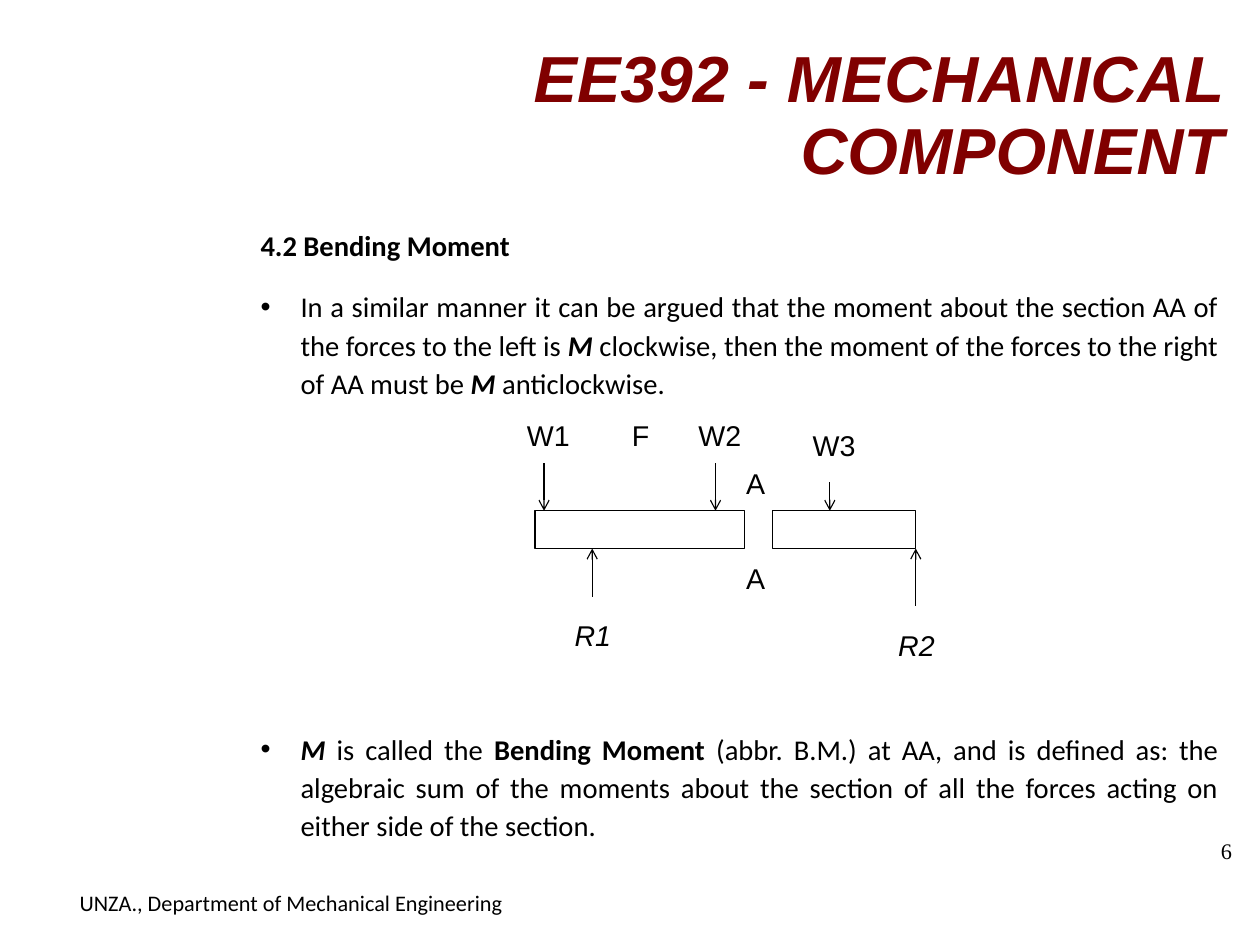
from lxml import etree
from pptx import Presentation
from pptx.dml.color import RGBColor
from pptx.enum.shapes import MSO_CONNECTOR, MSO_SHAPE
from pptx.enum.text import MSO_ANCHOR, MSO_AUTO_SIZE, PP_ALIGN
from pptx.oxml.ns import qn
from pptx.util import Cm, Pt

LEFT, RIGHT, JUSTIFY = PP_ALIGN.LEFT, PP_ALIGN.RIGHT, PP_ALIGN.JUSTIFY
TOP, MIDDLE = MSO_ANCHOR.TOP, MSO_ANCHOR.MIDDLE
NO_AUTOFIT = MSO_AUTO_SIZE.NONE
RECTANGLE = MSO_SHAPE.RECTANGLE
STRAIGHT = MSO_CONNECTOR.STRAIGHT

COLOURS = {"title": "800000", "ink": "000000", "paper": "FFFFFF"}

# Content: a run is (text, style), where style holds "b" and/or "i".
TITLE = "EE392 - MECHANICAL COMPONENT"
FOOTER = "UNZA., Department of Mechanical Engineering"
PAGE_NUMBER = "6"
HEADING = [("4.2 Bending Moment", "b")]
ARGUMENT = [
    ("In a similar manner it can be argued that the moment about the section AA "
     "of the forces to the left is ", ""),
    ("M ", "bi"),
    ("clockwise, then the moment of the forces to the right of AA must be ", ""),
    ("M", "bi"),
    (" anticlockwise.", ""),
]
DEFINITION = [
    ("M", "bi"),
    (" is called the ", ""),
    ("Bending Moment ", "b"),
    ("(abbr. B.M.) at AA, and is defined as: the algebraic sum of the moments about "
     "the section of all the forces acting on either side of the section.", ""),
]
DIAGRAM_GAP = 192  # points kept free for the diagram

# Diagram, in centimetres
BEAM_TOP, BEAM_HEIGHT = 11.35, 0.84
BEAM_BOTTOM = BEAM_TOP + BEAM_HEIGHT
BEAMS = [(11.89, 4.65), (17.17, 3.18)]  # left, width
LOADS = [(12.09, 10.29), (15.9, 10.29), (18.44, 10.72)]  # x, start of arrow
REACTIONS = [(13.16, 13.26), (20.35, 13.46)]
LABEL_HEIGHT = 0.97
LABELS = [  # text, style, left, top, width
    ("W1", "", 11.46, 9.22, 1.7),
    ("F", "", 13.79, 9.22, 1.07),
    ("W2", "", 15.27, 9.22, 1.47),
    ("W3", "", 17.81, 9.45, 1.7),
    ("A", "", 16.33, 10.29, 1.07),
    ("A", "", 16.33, 12.4, 1.7),
    ("R1", "i", 12.52, 13.67, 1.7),
    ("R2", "i", 19.71, 13.89, 1.7),
]


def colour(name):
    return RGBColor.from_string(COLOURS[name])


def set_frame(frame, insets=(0, 0, 0, 0), anchor=TOP):
    frame.word_wrap = True
    frame.auto_size = NO_AUTOFIT
    frame.vertical_anchor = anchor
    (frame.margin_left, frame.margin_top,
     frame.margin_right, frame.margin_bottom) = map(Cm, insets)


def write(paragraph, runs, *, size=18, font="Arial", ink="ink", align=LEFT,
          spacing=0.93, before=0, after=0):
    paragraph.alignment = align
    paragraph.line_spacing = spacing
    paragraph.space_before, paragraph.space_after = Pt(before), Pt(after)
    for text, style in runs:
        run = paragraph.add_run()
        run.text = text
        run.font.name, run.font.size = font, Pt(size)
        run.font.bold, run.font.italic = "b" in style, "i" in style
        run.font.color.rgb = colour(ink)


def hang(paragraph, bullet):
    """Give a hanging indent and, if asked, a round bullet."""
    properties = paragraph._p.get_or_add_pPr()
    properties.set("marL", str(Cm(1.19)))
    properties.set("indent", str(-Cm(0.89)))
    if bullet:
        etree.SubElement(properties, qn("a:buFont")).set("typeface", "Arial")
        etree.SubElement(properties, qn("a:buChar")).set("char", "•")


def add_text(slide, left, top, width, height, insets=(0, 0, 0, 0)):
    box = slide.shapes.add_textbox(Cm(left), Cm(top), Cm(width), Cm(height))
    set_frame(box.text_frame, insets)
    return box


def add_beam(slide, left, width):
    beam = slide.shapes.add_shape(
        RECTANGLE, Cm(left), Cm(BEAM_TOP), Cm(width), Cm(BEAM_HEIGHT))
    beam.shadow.inherit = False
    beam.fill.background()
    beam.line.color.rgb = colour("ink")
    beam.line.width = Pt(0.75)


def add_force(slide, x, start, end):
    force = slide.shapes.add_connector(STRAIGHT, Cm(x), Cm(start), Cm(x), Cm(end))
    force.line.color.rgb = colour("ink")
    force.line.width = Pt(0.75)
    outline = force.line._get_or_add_ln()
    etree.SubElement(outline, qn("a:tailEnd")).set("type", "arrow")
    etree.SubElement(force._element.spPr, qn("a:effectLst"))


def add_title(slide):
    title = slide.shapes.title
    title.left, title.top, title.width, title.height = map(Cm, (10.11, 0.84, 17.09, 3.5))
    set_frame(title.text_frame, anchor=MIDDLE)
    write(title.text_frame.paragraphs[0], [(TITLE, "bi")],
          size=41, ink="title", align=RIGHT)


def add_body(slide):
    frame = add_text(slide, 5.49, 4.9, 21.59, 14.05, (0, 0.08, 0, 0)).text_frame
    parts = [(HEADING, False, 0), (ARGUMENT, True, 0), (DEFINITION, True, DIAGRAM_GAP)]
    for index, (runs, bullet, before) in enumerate(parts):
        paragraph = frame.add_paragraph() if index else frame.paragraphs[0]
        hang(paragraph, bullet)
        write(paragraph, runs, font="Calibri", align=JUSTIFY, spacing=1.12,
              before=before, after=14.2)


def add_diagram(slide):
    for left, width in BEAMS:
        add_beam(slide, left, width)
    for x, start in LOADS:
        add_force(slide, x, start, BEAM_TOP)
    for x, start in REACTIONS:
        add_force(slide, x, start, BEAM_BOTTOM)
    for text, style, left, top, width in LABELS:
        label = add_text(slide, left, top, width, LABEL_HEIGHT, (0.25, 0.13, 0, 0.13))
        label.fill.solid()
        label.fill.fore_color.rgb = colour("paper")
        write(label.text_frame.paragraphs[0], [(text, style)])


def main():
    deck = Presentation()
    deck.slide_width, deck.slide_height = Cm(28), Cm(21)
    slide = deck.slides.add_slide(deck.slide_layouts[5])
    add_title(slide)
    add_body(slide)
    add_diagram(slide)
    number = add_text(slide, 20.88, 18.64, 6.5, 1.42)
    write(number.text_frame.paragraphs[0], [(PAGE_NUMBER, "")],
          size=14, font="Times New Roman", align=RIGHT, spacing=0.95)
    footer = add_text(slide, 1.52, 19.56, 13.46, 1.09, (0.25, 0.13, 0.25, 0.13))
    write(footer.text_frame.paragraphs[0], [(FOOTER, "")],
          size=14, font="Calibri", spacing=1.12)
    deck.save("out.pptx")


if __name__ == "__main__":
    main()
